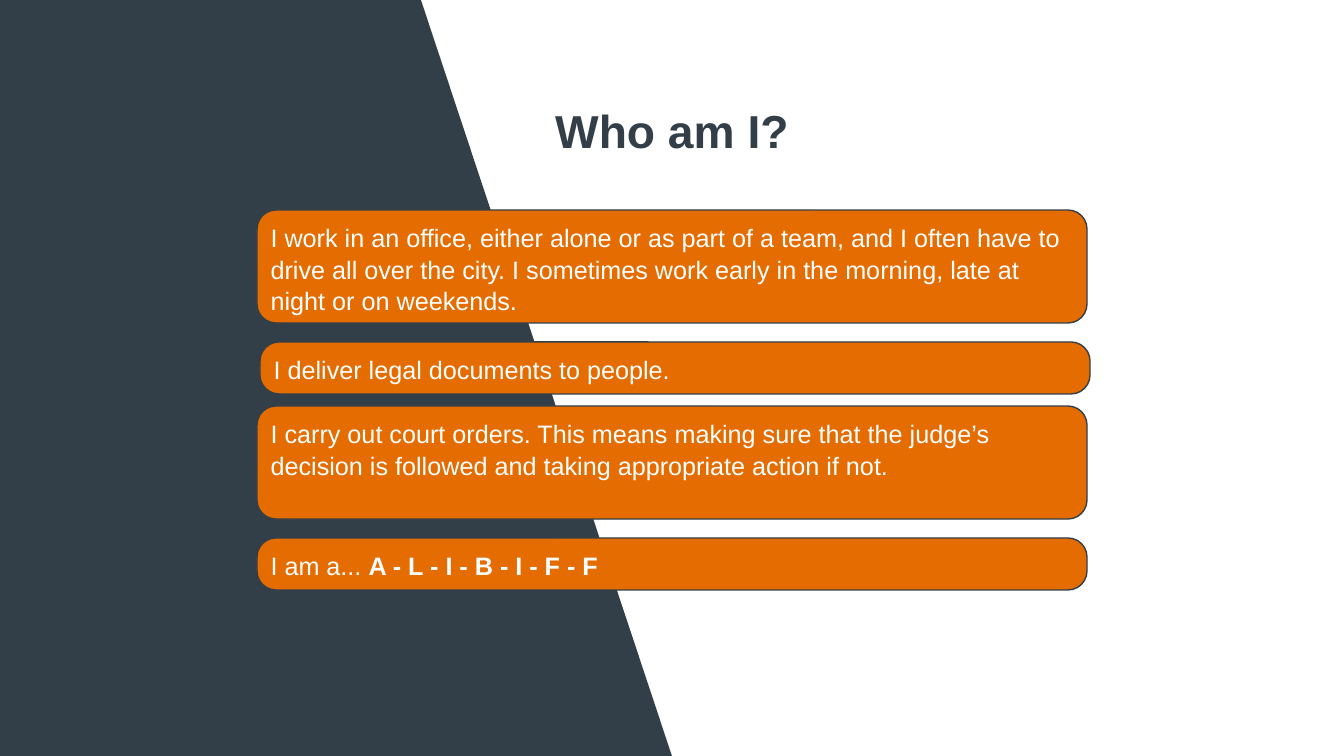
from dataclasses import dataclass
from pptx import Presentation
from pptx.dml.color import RGBColor
from pptx.enum.shapes import MSO_SHAPE
from pptx.enum.text import MSO_ANCHOR, PP_ALIGN
from pptx.util import Inches, Pt


@dataclass(frozen=True)
class Theme:
    font: str = "Arial"
    dark: RGBColor = RGBColor(0x33, 0x3F, 0x48)
    accent: RGBColor = RGBColor(0xE4, 0x6C, 0x00)
    white: RGBColor = RGBColor(0xFF, 0xFF, 0xFF)
    title_size: int = 33
    clue_size: int = 18
    clue_spacing: float = 1.05


THEME = Theme()
SLIDE_W, SLIDE_H = 1344, 756
BAND_LEFT, BAND_W, BAND_SLANT = -308, 980, 251
TITLE = "Who am I?"
TITLE_BOX = (411, 97, 522, 66)
CLUE_W, CLUE_RADIUS = 830, 19
INSET_X, INSET_Y = 8, 5
TALL, SHORT = 113, 52

# left, top, height, runs as (text, bold)
CLUES = [
    (257, 210, TALL, [("I work in an office, either alone or as part of a team, and I often have to "
                       "drive all over the city. I sometimes work early in the morning, late at "
                       "night or on weekends.", False)]),
    (260, 342, SHORT, [("I deliver legal documents to people.", False)]),
    (257, 406, TALL, [("I carry out court orders. This means making sure that the judge’s "
                       "decision is followed and taking appropriate action if not.", False)]),
    (257, 538, SHORT, [("I am a... ", False), ("A - L - I - B - I - F - F", True)]),
]


def px(n):
    return round(n * Inches(1) / 100.8)


def add_panel(s, kind, box, adjustment, fill):
    sp = s.shapes.add_shape(kind, *map(px, box))
    sp.adjustments[0] = adjustment
    sp.shadow.inherit = False
    sp.fill.solid()
    sp.fill.fore_color.rgb = fill
    sp.line.fill.background()
    return sp


def write(sp, runs, size, color, align):
    tf = sp.text_frame
    tf.word_wrap = True
    tf.vertical_anchor = MSO_ANCHOR.TOP
    tf.margin_left = tf.margin_right = px(INSET_X)
    tf.margin_top = tf.margin_bottom = px(INSET_Y)
    p = tf.paragraphs[0]
    p.alignment = align
    for text, bold in runs:
        r = p.add_run()
        r.text = text
        r.font.name = THEME.font
        r.font.size = Pt(size)
        r.font.bold = bold
        r.font.color.rgb = color
    return p


def main():
    prs = Presentation()
    prs.slide_width, prs.slide_height = px(SLIDE_W), px(SLIDE_H)
    s = prs.slides.add_slide(prs.slide_layouts[6])

    add_panel(s, MSO_SHAPE.TRAPEZOID, (BAND_LEFT, 0, BAND_W, SLIDE_H),
              BAND_SLANT / SLIDE_H, THEME.dark)

    for left, top, height, runs in CLUES:
        sp = add_panel(s, MSO_SHAPE.ROUNDED_RECTANGLE, (left, top, CLUE_W, height),
                       CLUE_RADIUS / height, THEME.accent)
        sp.line.color.rgb = THEME.dark
        sp.line.width = Pt(1)
        p = write(sp, runs, THEME.clue_size, THEME.white, PP_ALIGN.LEFT)
        p.line_spacing = THEME.clue_spacing

    title = s.shapes.add_textbox(*map(px, TITLE_BOX))
    write(title, [(TITLE, True)], THEME.title_size, THEME.dark, PP_ALIGN.CENTER)
    prs.save("out.pptx")


if __name__ == "__main__":
    main()
